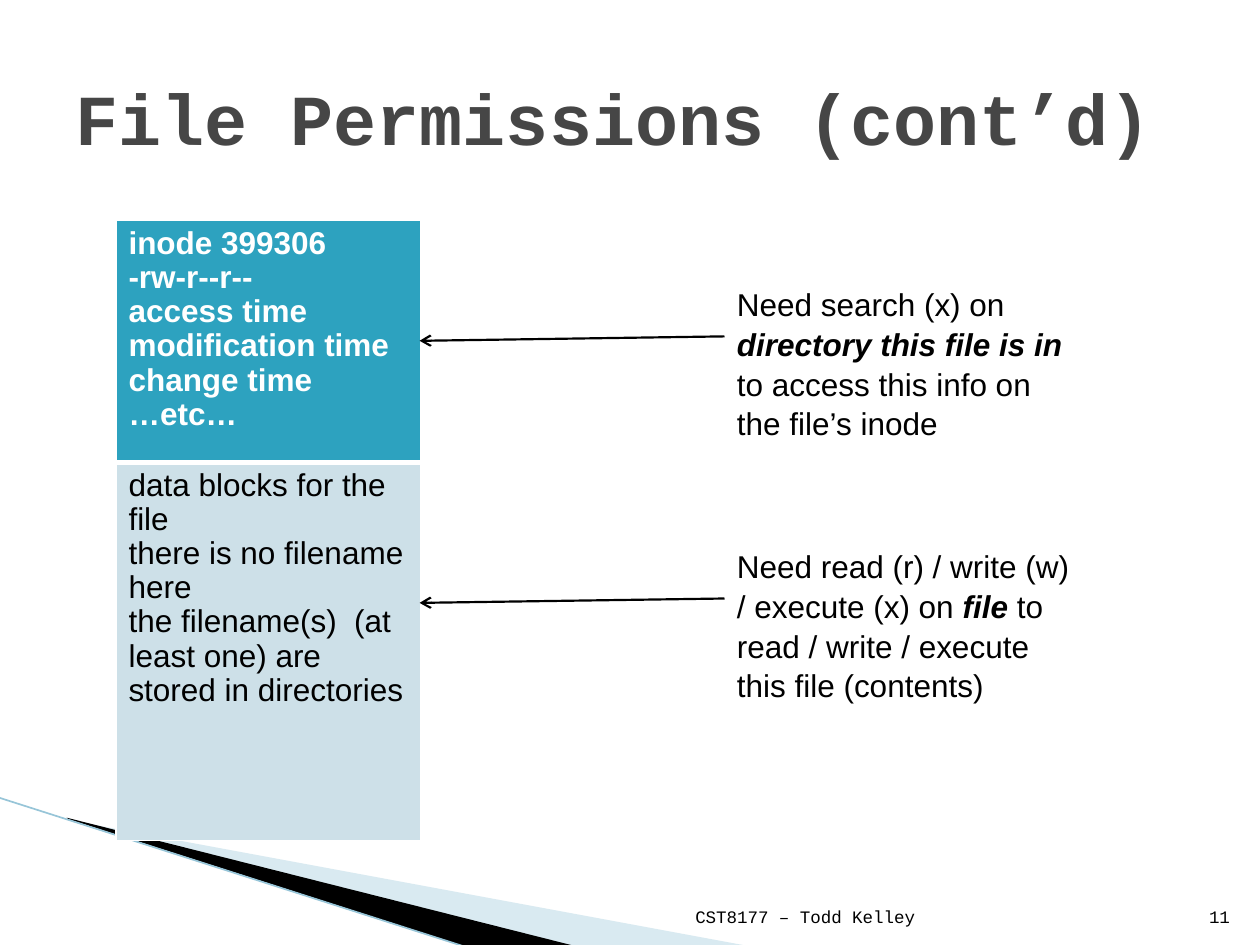
import pptx
import pptx.util
import pptx.dml.color
import pptx.enum.text
import pptx.enum.shapes
import pptx.oxml.ns
from dataclasses import dataclass
from lxml import etree


@dataclass(frozen=True)
class Theme:
    title_font: str = "Courier New"
    body_font: str = "Arial"
    title_size: int = 41
    body_size: int = 18
    footer_size: int = 10
    title: str = "464646"
    text: str = "000000"
    white: str = "FFFFFF"
    header: str = "2DA2BF"
    data: str = "CDE0E8"
    wedge: str = "A0CBDC"
    edge: str = "97C5D8"


def sub(parent, tag, **attrs):
    return etree.SubElement(parent, pptx.oxml.ns.qn(tag), attrs)


def rgb(color):
    return pptx.dml.color.RGBColor.from_string(color)


class Deck:
    COLS, ROWS = 100, 75

    def __init__(self, theme):
        self.t = theme
        self.prs = pptx.Presentation()
        self.prs.slide_width = pptx.util.Inches(10)
        self.prs.slide_height = pptx.util.Inches(7.5)
        self.s = self.prs.slides.add_slide(self.prs.slide_layouts[5])

    def x(self, cols):
        return round(self.prs.slide_width * cols / self.COLS)

    def y(self, rows):
        return round(self.prs.slide_height * rows / self.ROWS)

    def box(self, left, top, width, height):
        return self.x(left), self.y(top), self.x(width), self.y(height)

    def style(self, r, font, size, color, bold=False, italic=False):
        r.font.name = font
        r.font.size = pptx.util.Pt(size)
        r.font.color.rgb = rgb(color)
        r.font.bold = bold
        r.font.italic = italic

    def title(self, text, *box):
        sp = self.s.shapes.title
        sp.left, sp.top, sp.width, sp.height = self.box(*box)
        tf = sp.text_frame
        tf.text = text
        tf.vertical_anchor = pptx.enum.text.MSO_ANCHOR.MIDDLE
        p = tf.paragraphs[0]
        p.alignment = pptx.enum.text.PP_ALIGN.LEFT
        self.style(p.runs[0], self.t.title_font, self.t.title_size, self.t.title, True)

    def wedge(self, points, color, opacity=100):
        pts = [(self.x(c), self.y(r)) for c, r in points]
        fb = self.s.shapes.build_freeform(*pts[0], scale=1.0)
        fb.add_line_segments(pts[1:], close=True)
        sp = fb.convert_to_shape()
        sp.shadow.inherit = False
        sp.line.fill.background()
        sp.fill.solid()
        sp.fill.fore_color.rgb = rgb(color)
        if opacity < 100:
            clr = sp._element.spPr.find(".//" + pptx.oxml.ns.qn("a:srgbClr"))
            sub(clr, "a:alpha", val=str(opacity * 1000))

    def line(self, start, end, color, width, arrow=False):
        ln = self.s.shapes.add_connector(
            pptx.enum.shapes.MSO_CONNECTOR.STRAIGHT,
            self.x(start[0]), self.y(start[1]), self.x(end[0]), self.y(end[1]))
        ln.line.color.rgb = rgb(color)
        ln.line.width = pptx.util.Pt(width)
        if arrow:
            sub(ln.line._get_or_add_ln(), "a:tailEnd", type="arrow")
        sub(ln._element.spPr, "a:effectLst")

    def footer(self, text, *box):
        tf = self.s.shapes.add_textbox(*self.box(*box)).text_frame
        tf.word_wrap = True
        tf.vertical_anchor = pptx.enum.text.MSO_ANCHOR.BOTTOM
        tf.text = text
        p = tf.paragraphs[0]
        p.alignment = pptx.enum.text.PP_ALIGN.RIGHT
        self.style(p.runs[0], self.t.title_font, self.t.footer_size, self.t.text)

    def note(self, parts, *box):
        tf = self.s.shapes.add_textbox(*self.box(*box)).text_frame
        tf.word_wrap = True
        tf.auto_size = pptx.enum.text.MSO_AUTO_SIZE.SHAPE_TO_FIT_TEXT
        p = tf.paragraphs[0]
        p.line_spacing = 1.05
        for text, strong in parts:
            r = p.add_run()
            r.text = text
            self.style(r, self.t.body_font, self.t.body_size, self.t.text, strong, strong)

    def borders(self, cell, top, bottom):
        tc_pr = cell._tc.get_or_add_tcPr()
        for side, width in (("L", 1), ("R", 1), ("T", top), ("B", bottom)):
            ln = sub(tc_pr, "a:ln" + side, w=str(pptx.util.Pt(width)))
            sub(sub(ln, "a:solidFill"), "a:srgbClr", val=self.t.white)

    def table(self, rows, *box):
        tb = self.s.shapes.add_table(len(rows), 1, *self.box(*box)).table
        for i, (height, lines, fill, color, bold, top, bottom) in enumerate(rows):
            tb.rows[i].height = self.y(height)
            cell = tb.cell(i, 0)
            self.borders(cell, top, bottom)
            cell.fill.solid()
            cell.fill.fore_color.rgb = rgb(fill)
            cell.text_frame.text = "\n".join(lines)
            for p in cell.text_frame.paragraphs:
                p.line_spacing = 0.97
                self.style(p.runs[0], self.t.body_font, self.t.body_size, color, bold)


def main():
    t = Theme()
    d = Deck(t)
    d.wedge([(5.5, 65.1), (59.5, 75.1), (45.6, 75.1), (5.5, 65)], t.wedge, 40)
    d.wedge([(5.3, 64.9), (45.7, 75.1), (37.2, 75.2), (5.4, 65)], t.text)
    d.line((-0.1, 63.3), (37.1, 75.2), t.edge, 0.95)
    d.title("File Permissions (cont’d)", 5, 3, 90, 12.5)
    d.footer("CST8177 – Todd Kelley", 47.9, 70.1, 25.7, 4)
    d.footer("11", 94.6, 70.1, 4, 4)

    inode = ["inode 399306", "-rw-r--r--", "access time", "modification time",
             "change time", "…etc…"]
    blocks = ["data blocks for the file", "there is no filename here",
              "the filename(s)  (at least one) are stored in directories"]
    d.table([(19.2, inode, t.header, t.white, True, 1, 3),
             (30, blocks, t.data, t.text, False, 3, 1)], 9.2, 17.5, 24.2, 49.2)

    notes = [
        (22, [("Need search (x) on ", False), ("directory this file is in", True),
              (" to access this info on the file’s inode", False)]),
        (42.8, [("Need read (r) / write (w) / execute (x) on ", False), ("file ", True),
                ("to read / write / execute this file (contents)", False)]),
    ]
    for top, parts in notes:
        d.note(parts, 57.5, top, 28.4, 13.1)
        d.line((57.5, top + 4.7), (33.3, top + 5.05), t.text, 1.25, arrow=True)
    d.prs.save("out.pptx")


if __name__ == "__main__":
    main()
